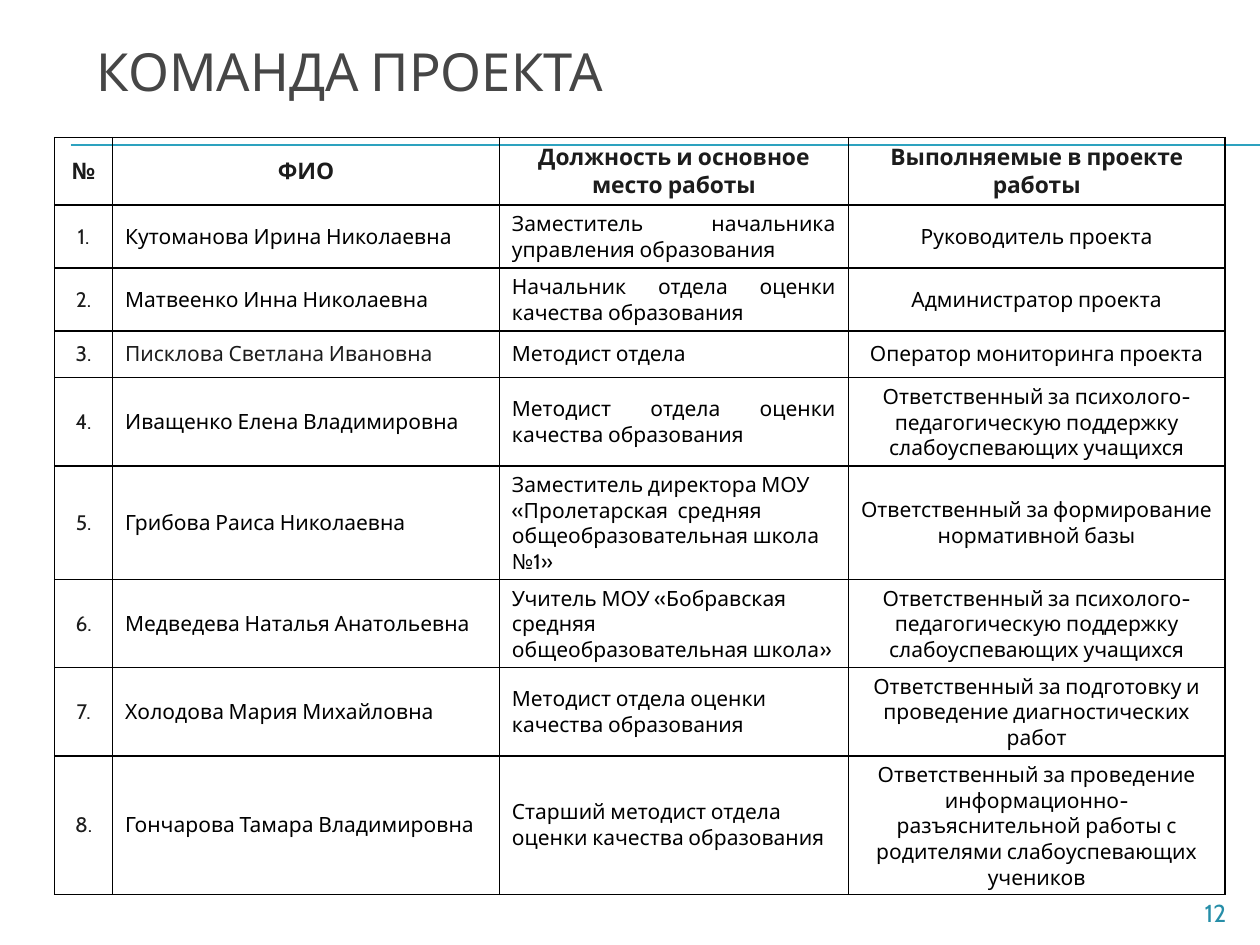
from lxml.etree import SubElement
from pptx import Presentation
from pptx.dml.color import RGBColor
from pptx.enum.shapes import MSO_CONNECTOR
from pptx.enum.text import MSO_ANCHOR, PP_ALIGN as AL
from pptx.oxml import parse_xml
from pptx.oxml.ns import nsdecls, qn
from pptx.util import Pt

FONT = "Cabin"
COLORS = {"title": "464646", "dark": "1C1C1C", "text": "000000",
          "border": "000000", "rule": "2DA2BF", "page": "268EA8"}

TITLE = "КОМАНДА ПРОЕКТА"
PAGE = "12"
SUPPORT = "Ответственный за психолого-педагогическую поддержку слабоуспевающих учащихся"
HEADERS = ["№", "ФИО", "Должность и основное место работы", "Выполняемые в проекте работы"]
TEAM = [
    ("Кутоманова Ирина Николаевна", "Заместитель начальника управления образования",
     "Руководитель проекта"),
    ("Матвеенко Инна Николаевна", "Начальник отдела оценки качества образования",
     "Администратор проекта"),
    ("Писклова Светлана Ивановна", "Методист отдела", "Оператор мониторинга проекта"),
    ("Иващенко Елена Владимировна", "Методист отдела оценки качества образования", SUPPORT),
    ("Грибова Раиса Николаевна",
     "Заместитель директора МОУ «Пролетарская  средняя общеобразовательная школа №1»",
     "Ответственный за формирование нормативной базы"),
    ("Медведева Наталья Анатольевна",
     "Учитель МОУ «Бобравская  средняя общеобразовательная школа»", SUPPORT),
    ("Холодова Мария Михайловна", "Методист отдела оценки качества образования",
     "Ответственный за подготовку и проведение диагностических работ"),
    ("Гончарова Тамара Владимировна", "Старший методист отдела оценки качества образования",
     "Ответственный за проведение информационно-разъяснительной работы "
     "с родителями слабоуспевающих учеников"),
]
COL_WIDTHS = [33.12, 221.04, 199.44, 215.28]
ROW_HEIGHTS = [36.72, 34.56, 34.56, 26.64, 34.56, 48.24, 48.24, 34.56, 37.44]
COL_ALIGN = [AL.CENTER, AL.LEFT, AL.LEFT, AL.CENTER]
JUSTIFIED = {(1, 2), (2, 2), (4, 2)}
TIGHT = {(1, 3), (2, 3), (3, 3), (5, 3)}
DARK_NAME = (3, 1)


def write(tf, text, size, color, align=AL.LEFT, bold=False):
    tf.word_wrap = True
    p = tf.paragraphs[0]
    p.alignment = align
    r = p.add_run()
    r.text = text
    r.font.name = FONT
    r.font.size = Pt(size)
    r.font.bold = bold
    r.font.color.rgb = RGBColor.from_string(COLORS[color])


def add_text(s, box, text, size, color, align=AL.LEFT, anchor=MSO_ANCHOR.TOP):
    tf = s.shapes.add_textbox(*map(Pt, box)).text_frame
    tf.vertical_anchor = anchor
    write(tf, text, size, color, align)


def add_rule(s, y):
    line = s.shapes.add_connector(MSO_CONNECTOR.STRAIGHT, Pt(40.32), Pt(y), Pt(720), Pt(y))
    line.line.color.rgb = RGBColor.from_string(COLORS["rule"])
    line.line.width = Pt(0.75)
    SubElement(line._element.spPr, qn("a:effectLst"))


def set_borders(cell):
    tc_pr = cell._tc.get_or_add_tcPr()
    for i, side in enumerate("LRTB"):
        tc_pr.insert(i, parse_xml(
            f'<a:ln{side} {nsdecls("a")} w="{Pt(1)}"><a:solidFill>'
            f'<a:srgbClr val="{COLORS["border"]}"/></a:solidFill></a:ln{side}>'))


def fill_cell(cell, pos, text):
    row, col = pos
    side, top = (4.95, 0) if pos in TIGHT else (7.2, 3.6)
    cell.margin_left = cell.margin_right = Pt(side)
    cell.margin_top = cell.margin_bottom = Pt(top)
    cell.vertical_anchor = MSO_ANCHOR.MIDDLE
    cell.fill.background()
    set_borders(cell)
    header = row == 0
    align = AL.CENTER if header else AL.JUSTIFY if pos in JUSTIFIED else COL_ALIGN[col]
    color = "dark" if header or col == 0 or pos == DARK_NAME else "text"
    write(cell.text_frame, text, 13 if header else 12, color, align, header)


def add_team_table(s):
    rows = [HEADERS] + [(f"{n}.", *member) for n, member in enumerate(TEAM, 1)]
    table = s.shapes.add_table(len(rows), len(HEADERS), Pt(31.2), Pt(78.7),
                               Pt(sum(COL_WIDTHS)), Pt(sum(ROW_HEIGHTS))).table
    table.first_row = table.horz_banding = False
    for column, width in zip(table.columns, COL_WIDTHS):
        column.width = Pt(width)
    for i, (values, height) in enumerate(zip(rows, ROW_HEIGHTS)):
        table.rows[i].height = Pt(height)
        for j, text in enumerate(values):
            fill_cell(table.cell(i, j), (i, j), text)


def main():
    prs = Presentation()
    prs.slide_width, prs.slide_height = Pt(720), Pt(540)
    s = prs.slides.add_slide(prs.slide_layouts[6])
    for y in (82.9, 83.2):
        add_rule(s, y)
    add_text(s, (48.24, 14.5, 661.68, 51.12), TITLE, 30, "title", anchor=MSO_ANCHOR.MIDDLE)
    add_team_table(s)
    add_text(s, (36.72, 509.76, 671.04, 19.44), PAGE, 14, "page", AL.RIGHT)
    prs.save("out.pptx")


if __name__ == "__main__":
    main()
